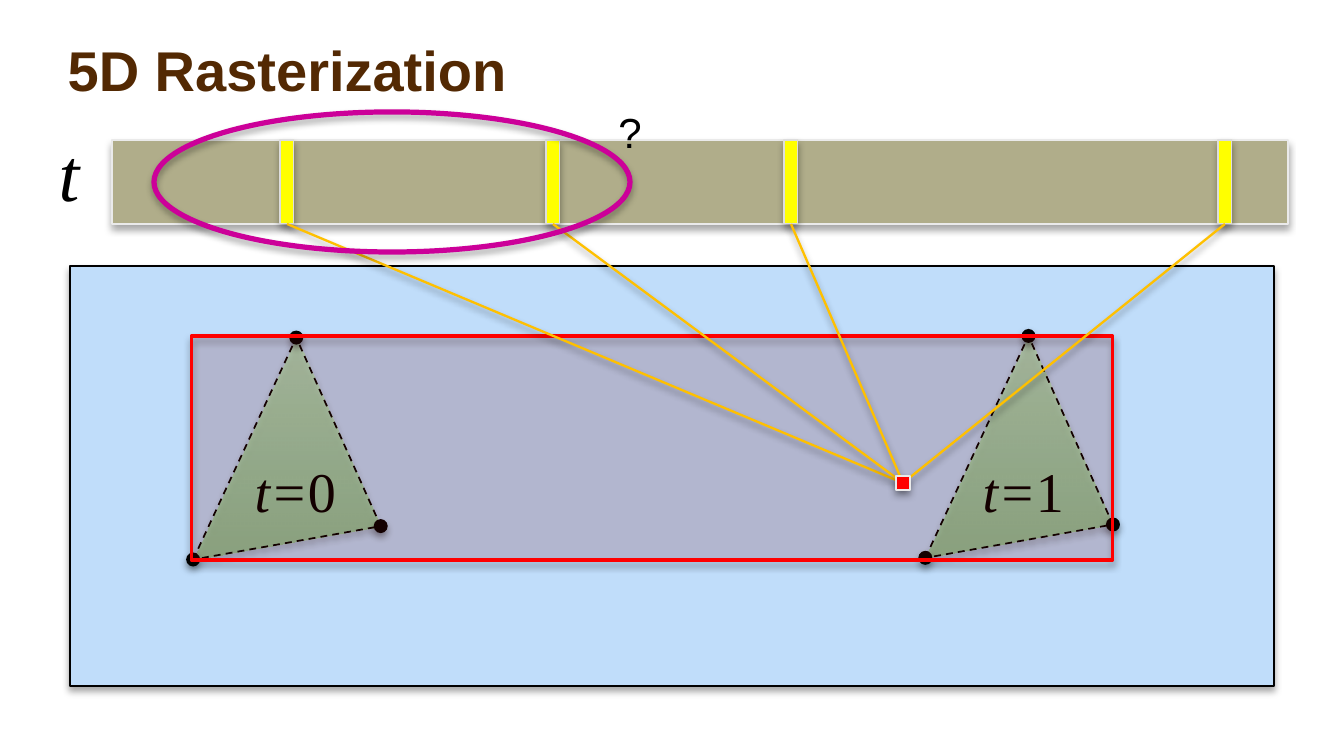
from dataclasses import dataclass

from lxml import etree
from pptx import Presentation
from pptx.dml.color import RGBColor
from pptx.enum.dml import MSO_LINE
from pptx.enum.shapes import MSO_CONNECTOR, MSO_SHAPE
from pptx.enum.text import MSO_ANCHOR
from pptx.oxml.ns import qn
from pptx.util import Pt


@dataclass(frozen=True)
class Theme:
    title: str = "532903"
    ink: str = "000000"
    screen: str = "C0DDFA"
    axis: str = "B0AD8A"
    edge: str = "EAEAEA"
    tick: str = "FFFF00"
    tick_edge: str = "DDDDDD"
    bounds: str = "990000"
    red: str = "FF0000"
    ray: str = "FFC000"
    highlight: str = "CC0099"
    gradient: tuple = (("73CC48", 42), ("BBFFA6", 49))
    sans: str = "Arial"
    serif: str = "Times New Roman"
    title_size: int = 24
    label_size: int = 24
    axis_size: int = 32
    note_size: int = 18


THEME = Theme()


def rgb(value):
    return RGBColor.from_string(value)


def set_alpha(parent, percent):
    for color in parent.iter(qn("a:srgbClr")):
        etree.SubElement(color, qn("a:alpha"), val=str(percent * 1000))


def add_shadow(sp, percent=35):
    """Soft black shadow falling straight down."""
    pr = sp._element.spPr
    effects = pr.find(qn("a:effectLst"))
    if effects is None:
        effects = etree.SubElement(pr, qn("a:effectLst"))
    shadow = etree.SubElement(
        effects, qn("a:outerShdw"), blurRad=str(Pt(3.1)), dist=str(Pt(1.8)),
        dir="5400000", rotWithShape="0")
    etree.SubElement(shadow, qn("a:srgbClr"), val=THEME.ink)
    set_alpha(shadow, percent)


def set_line(sp, color, width):
    if color:
        sp.line.color.rgb = rgb(color)
        sp.line.width = Pt(width)
    else:
        sp.line.fill.background()


def add_box(s, kind, x, y, w, h, fill=None, line=None, width=0.75, alpha=None):
    sp = s.shapes.add_shape(kind, Pt(x), Pt(y), Pt(w), Pt(h))
    if fill:
        sp.fill.solid()
        sp.fill.fore_color.rgb = rgb(fill)
        if alpha:
            set_alpha(sp._element.spPr.find(qn("a:solidFill")), alpha)
    else:
        sp.fill.background()
    set_line(sp, line, width)
    sp.shadow.inherit = False
    add_shadow(sp)
    return sp


def add_triangle(s, points):
    corners = [(Pt(x), Pt(y)) for x, y in points]
    builder = s.shapes.build_freeform(*corners[0], scale=1.0)
    builder.add_line_segments(corners[1:], close=True)
    sp = builder.convert_to_shape()
    sp.fill.gradient()
    sp.fill.gradient_angle = 90
    for stop, (color, alpha) in zip(sp.fill.gradient_stops, THEME.gradient):
        stop.color.rgb = rgb(color)
        set_alpha(stop.color._xFill, alpha)
    set_line(sp, THEME.ink, 0.75)
    sp.line.dash_style = MSO_LINE.DASH
    sp.shadow.inherit = False
    add_shadow(sp)


def add_ray(s, start, end):
    ray = s.shapes.add_connector(MSO_CONNECTOR.STRAIGHT, *map(Pt, start + end))
    set_line(ray, THEME.ray, 1)
    add_shadow(ray, 38)


def add_text(s, x, y, w, h, runs, font, size, color=THEME.ink, bold=False):
    """Add one line of text; runs holds (text, italic) pairs."""
    tf = s.shapes.add_textbox(Pt(x), Pt(y), Pt(w), Pt(h)).text_frame
    tf.word_wrap = False
    p = tf.paragraphs[0]
    p.font.name, p.font.size, p.font.bold = font, Pt(size), bold
    p.font.color.rgb = rgb(color)
    for text, italic in runs:
        r = p.add_run()
        r.text = text
        if italic:
            r.font.italic = True
    return tf


def main():
    prs = Presentation()
    prs.slide_width, prs.slide_height = Pt(576), Pt(324)
    s = prs.slides.add_slide(prs.slide_layouts[6])
    rect, oval = MSO_SHAPE.RECTANGLE, MSO_SHAPE.OVAL

    # Title
    tf = add_text(s, 23, 12.2, 500, 34.6, [("5D Rasterization", False)],
                  THEME.sans, THEME.title_size, THEME.title, bold=True)
    tf.word_wrap = True
    tf.vertical_anchor = MSO_ANCHOR.MIDDLE
    tf.margin_left = tf.margin_right = Pt(6)
    tf.margin_top = tf.margin_bottom = Pt(3)

    # Screen, with the triangle at the start and end of its motion
    add_box(s, rect, 30, 114, 516, 180, THEME.screen, THEME.ink)
    triangle = [(82.8, 239.8), (127, 144.7), (163.2, 225.5)]
    moved = [(x + 313.8, y - 0.7) for x, y in triangle]
    for points in (triangle, moved):
        add_triangle(s, points)
    for x, time in ((102, "0"), (414, "1")):
        add_text(s, x, 192, 49.7, 36.4, [("t=", True), (time, False)],
                 THEME.serif, THEME.label_size)
    for x, y in triangle + moved:
        add_box(s, oval, x - 3, y - 3, 6, 6, THEME.ink)

    # Time axis with its sample ticks
    top, height, tick_width = 60, 36, 6
    ticks = (120, 234, 336, 522)
    add_box(s, rect, 48, top, 504, height, THEME.axis, THEME.edge)
    add_text(s, 18, 51, 24, 46, [("t", True)], THEME.serif, THEME.axis_size)
    for x in ticks:
        add_box(s, rect, x, top, tick_width, height,
                THEME.tick, THEME.tick_edge, 0.5)

    # Bounds of the motion
    add_box(s, rect, 82, 144, 394.8, 96, THEME.bounds, THEME.red, 1.5, alpha=13)

    # Rays from the pixel to each time sample
    for x in ticks:
        add_ray(s, (387, 207), (x + tick_width / 2, top + height))
    add_box(s, rect, 384, 204, 6, 6, THEME.red, THEME.edge)

    # Highlighted samples
    add_box(s, oval, 66, 48, 204, 60, line=THEME.highlight, width=2.25)
    add_text(s, 258, 42, 24.5, 29, [("?", False)], THEME.sans, THEME.note_size)

    prs.save("out.pptx")


if __name__ == "__main__":
    main()
